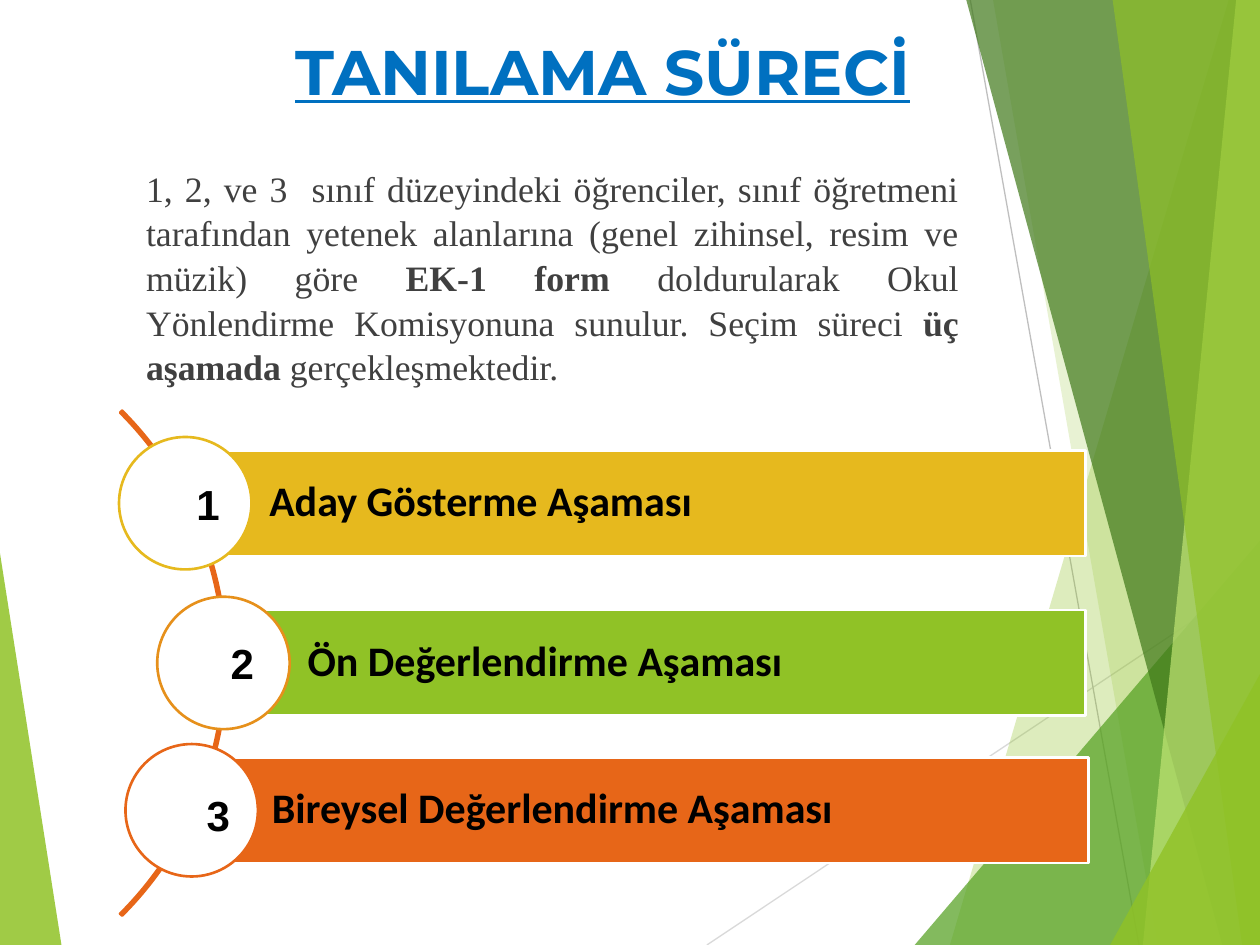
from dataclasses import dataclass
from typing import Any

from lxml.etree import SubElement
from pptx import Presentation
from pptx.dml.color import RGBColor
from pptx.enum.shapes import MSO_CONNECTOR as Connector, MSO_SHAPE as Shape
from pptx.enum.text import MSO_ANCHOR as Anchor, MSO_AUTO_SIZE as AutoSize, PP_ALIGN as Align
from pptx.oxml.ns import qn
from pptx.util import Cm, Pt

WIDTH, HEIGHT = 25.4, 19.05
BAR_HEIGHT, CIRCLE_SIZE = 2.13, 2.67
BAR_OFFSET = (CIRCLE_SIZE - BAR_HEIGHT) / 2
ARC_SIZE = 14.4
Points = list[tuple[float, float]]


@dataclass
class Facet:
    points: Points
    color: str
    opacity: int


@dataclass
class Ray:
    start: tuple[float, float]
    end: tuple[float, float]
    color: str


@dataclass
class Stage:
    label: str
    top: float
    bar_left: float
    bar_right: float
    circle_left: float
    fill: str
    ring: str
    number_box: tuple[float, float, float, float]
    number_align: Any


def band(top_x: float, bottom_x: float) -> Points:
    return [(top_x, 0), (bottom_x, HEIGHT), (WIDTH, HEIGHT), (WIDTH, 0)]


def wedge(bottom_x: float, right_y: float) -> Points:
    return [(bottom_x, HEIGHT), (WIDTH, right_y), (WIDTH, HEIGHT)]


LEFT_FACET = Facet([(0, 11.15), (1.24, HEIGHT), (0, HEIGHT)], "90C226", 85)
RAYS = [
    Ray((14.25, HEIGHT), (WIDTH, 11.61), "D9D9D9"),
    Ray((19.56, 0), (22.96, HEIGHT), "BFBFBF"),
]
RIGHT_FACETS = [
    Facet(band(24.77, 19.15), "90C226", 30),
    Facet(band(20.02, 23.34), "90C226", 20),
    Facet(wedge(18.44, 10.9), "54A021", 72),
    Facet(band(19.48, 24.64), "3F7819", 70),
    Facet(band(24.92, 23.04), "C0E474", 70),
    Facet(band(22.43, 25.04), "90C226", 65),
    Facet(wedge(22.38, 13.59), "90C226", 80),
]
STAGES = [
    Stage("Aday Gösterme Aşaması", 8.81, 3.73, 21.89, 2.4, "E6B91E", "E6B91E",
          (3.71, 9.53, 1.04, 1.3), Align.LEFT),
    Stage("Ön Değerlendirme Aşaması", 12.03, 4.5, 21.89, 3.17, "90C226", "E6901B",
          (4.34, 12.73, 1.09, 1.3), Align.CENTER),
    Stage("Bireysel Değerlendirme Aşaması", 15, 3.78, 21.95, 2.53, "E76618", "E76618",
          (3.78, 15.8, 1.24, 1.3), Align.CENTER),
]
BODY_SPANS = [
    ("1, 2, ve 3  sınıf düzeyindeki öğrenciler, sınıf öğretmeni tarafından yetenek "
     "alanlarına (genel zihinsel, resim ve müzik) göre ", False),
    ("EK-1 form ", True),
    ("doldurularak Okul Yönlendirme Komisyonuna sunulur. Seçim süreci ", False),
    ("üç aşamada ", True),
    ("gerçekleşmektedir.", False),
]


def paint(color_format, color: str) -> None:
    color_format.rgb = RGBColor.from_string(color)


def apply(target, values: dict[str, Any]) -> None:
    for name, value in values.items():
        setattr(target, name, value)


def place(shape, left: float, top: float, width: float, height: float) -> None:
    apply(shape, {"left": Cm(left), "top": Cm(top), "width": Cm(width), "height": Cm(height)})


def style_shape(shape, fill: str | None, line: str | None) -> None:
    shape.shadow.inherit = False
    if fill:
        shape.fill.solid()
        paint(shape.fill.fore_color, fill)
    else:
        shape.fill.background()
    if line:
        paint(shape.line.color, line)
        shape.line.width = Pt(1.5)
    else:
        shape.line.fill.background()


def add_span(para, text: str, color: str, **font_values: Any) -> None:
    span = para.add_run()
    span.text = text
    apply(span.font, font_values)
    paint(span.font.color, color)


def draw_facet(page, facet: Facet) -> None:
    corners = [(Cm(x), Cm(y)) for x, y in facet.points]
    builder = page.shapes.build_freeform(*corners[0])
    builder.add_line_segments(corners[1:], close=True)
    shape = builder.convert_to_shape()
    style_shape(shape, facet.color, None)
    color = shape._element.spPr.find(qn("a:solidFill"))[0]
    SubElement(color, qn("a:alpha"), val=str(facet.opacity * 1000))


def draw_ray(page, ray: Ray) -> None:
    ends = [Cm(value) for value in ray.start + ray.end]
    line = page.shapes.add_connector(Connector.STRAIGHT, *ends)
    paint(line.line.color, ray.color)
    line.line.width = Pt(0.75)
    SubElement(line._element.spPr, qn("a:effectLst"))


def draw_shape(page, kind, left: float, top: float, width: float, height: float,
               fill: str | None, line: str):
    shape = page.shapes.add_shape(kind, Cm(left), Cm(top), Cm(width), Cm(height))
    style_shape(shape, fill, line)
    return shape


def draw_stage(page, stage: Stage) -> None:
    bar = draw_shape(page, Shape.RECTANGLE, stage.bar_left, stage.top + BAR_OFFSET,
                     stage.bar_right - stage.bar_left, BAR_HEIGHT, stage.fill, "FFFFFF")
    apply(bar.text_frame, {
        "margin_left": Cm(1.7), "margin_right": Cm(0.18), "margin_top": Cm(0.18),
        "margin_bottom": Cm(0.18), "vertical_anchor": Anchor.MIDDLE, "word_wrap": True,
    })
    para = bar.text_frame.paragraphs[0]
    apply(para, {"alignment": Align.LEFT, "line_spacing": 0.9})
    add_span(para, stage.label, "000000", name="Calibri", size=Pt(24), bold=True)
    draw_shape(page, Shape.OVAL, stage.circle_left, stage.top, CIRCLE_SIZE, CIRCLE_SIZE,
               "FFFFFF", stage.ring)


def draw_number(page, number: int, stage: Stage) -> None:
    box = page.shapes.add_textbox(*[Cm(value) for value in stage.number_box])
    box.text_frame.word_wrap = True
    para = box.text_frame.paragraphs[0]
    para.alignment = stage.number_align
    add_span(para, str(number), "000000", name="Arial", size=Pt(24), bold=True)


def write_title(title) -> None:
    place(title, 1.7, 0.53, 20.9, 1.52)
    apply(title.text_frame, {"vertical_anchor": Anchor.TOP, "auto_size": AutoSize.NONE})
    para = title.text_frame.paragraphs[0]
    para.alignment = Align.CENTER
    add_span(para, "TANILAMA SÜRECİ", "0070C0", name="Montserrat", size=Pt(36),
             bold=True, underline=True)


def write_body(body) -> None:
    place(body, 2.69, 3.2, 16.89, 4.39)
    apply(body.text_frame, {"vertical_anchor": Anchor.TOP, "auto_size": AutoSize.NONE})
    para = body.text_frame.paragraphs[0]
    apply(para, {"alignment": Align.JUSTIFY, "space_before": Pt(10), "line_spacing": 1.04})
    properties = para._p.get_or_add_pPr()
    properties.set("marL", "0")
    properties.set("indent", "0")
    SubElement(properties, qn("a:buNone"))
    for text, bold in BODY_SPANS:
        add_span(para, text, "404040", name="Times New Roman", size=Pt(20.4), bold=bold)


def main() -> None:
    deck = Presentation()
    apply(deck, {"slide_width": Cm(WIDTH), "slide_height": Cm(HEIGHT)})
    page = deck.slides.add_slide(deck.slide_layouts[1])
    title, body = page.placeholders
    draw_facet(page, LEFT_FACET)
    for ray in RAYS:
        draw_ray(page, ray)
    for facet in RIGHT_FACETS:
        draw_facet(page, facet)
    for holder, write in ((title, write_title), (body, write_body)):
        page.shapes._spTree.append(holder._element)
        write(holder)
    arc = draw_shape(page, Shape.BLOCK_ARC, -9.83, 6.17, ARC_SIZE, ARC_SIZE, None, "E76618")
    for index, value in enumerate((189, 27, 0.004)):
        arc.adjustments[index] = value
    for stage in STAGES:
        draw_stage(page, stage)
    for number, stage in enumerate(STAGES, 1):
        draw_number(page, number, stage)
    deck.save("out.pptx")


if __name__ == "__main__":
    main()
